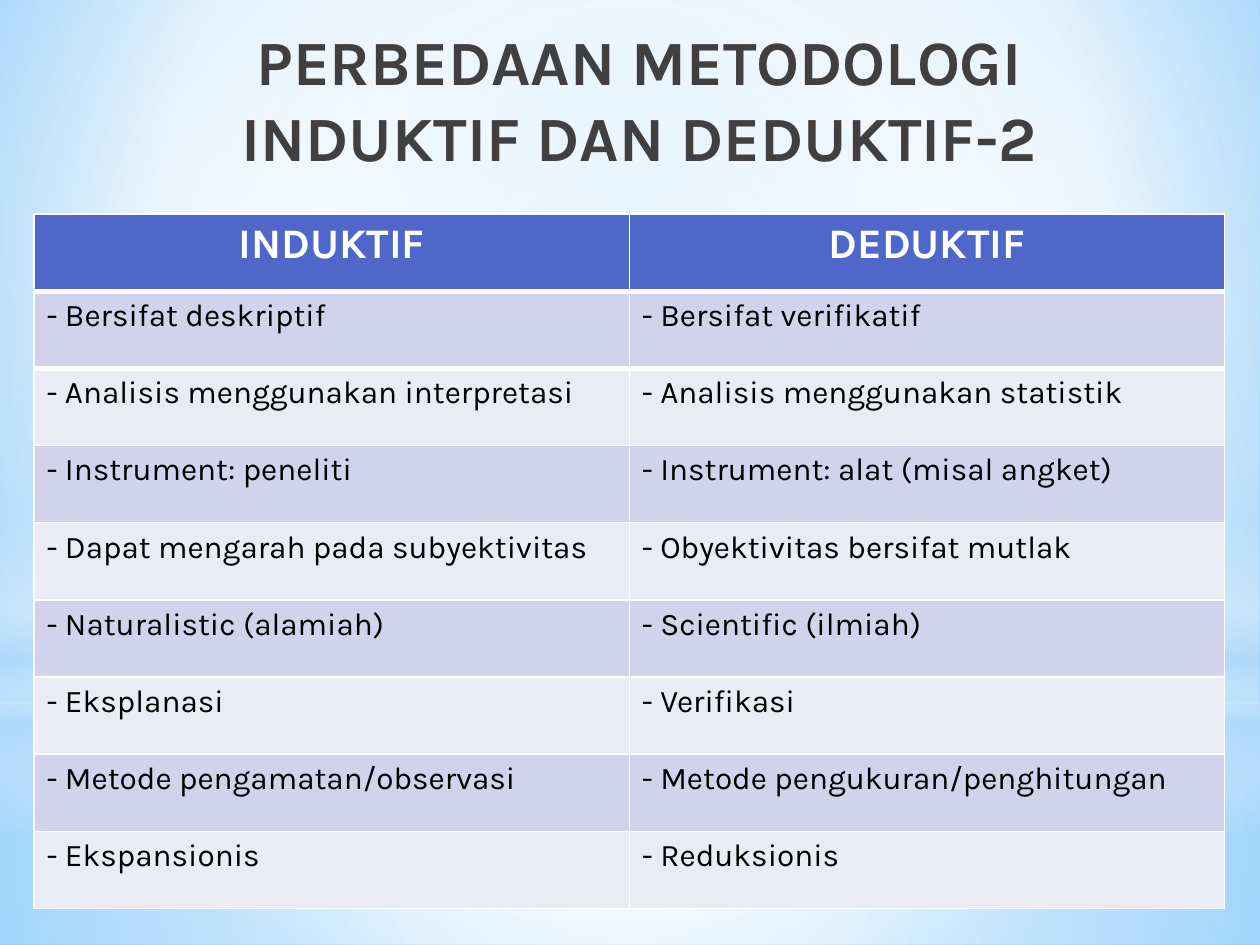
from lxml.etree import SubElement
from pptx import Presentation
from pptx.dml.color import RGBColor
from pptx.enum.shapes import MSO_SHAPE
from pptx.enum.text import MSO_ANCHOR, PP_ALIGN
from pptx.oxml.ns import qn
from pptx.util import Inches, Pt


def gradient(props, stops, centre=None, angle=90):
    """Swap the solid fill in props for a gradient of (position, colour, opacity)."""
    solid = props.find(qn("a:solidFill"))
    grad = props.makeelement(qn("a:gradFill"), {"rotWithShape": "1"})
    props.replace(solid, grad)
    stop_list = SubElement(grad, qn("a:gsLst"))
    for pos, colour, opacity in stops:
        stop = SubElement(stop_list, qn("a:gs"), pos=str(pos * 1000))
        clr = SubElement(stop, qn("a:srgbClr"), val=colour)
        SubElement(clr, qn("a:alpha"), val=str(opacity * 1000))
    if centre:
        circle = SubElement(grad, qn("a:path"), path="circle")
        SubElement(circle, qn("a:fillToRect"),
                   {side: str(v * 1000) for side, v in zip("ltrb", centre)})
    else:
        SubElement(grad, qn("a:lin"), ang=str(angle * 60000), scaled="0")


def write(p, text, size, colour, bold, align):
    """Add one run per line of text, with line breaks between them."""
    p.alignment = align
    for n, line in enumerate(text.split("\n")):
        if n:
            p.add_line_break()
        r = p.add_run()
        r.text = line
        r.font.name = "Karla"
        r.font.size = Pt(size)
        r.font.bold = bold
        r.font.color.rgb = RGBColor.from_string(colour)


prs = Presentation()
prs.slide_width, prs.slide_height = Inches(10), Inches(7.5)
s = prs.slides.add_slide(prs.slide_layouts[6])

# Background
s.background.fill.solid()
gradient(s.element.find(".//" + qn("p:bgPr")),
         [(0, "9ED5FF", 100), (60, "FFFFFF", 100), (100, "5BB9FF", 100)],
         centre=(20, 10, 20, 60))

# Soft light layers: preset, top, height, stops, centre
WHITE, SKY = "FFFFFF", "B4DCFA"
MIDDLE = (50, 50, 50, 50)
layers = [
    (MSO_SHAPE.RECTANGLE, 5.58, 1.92,
     [(0, WHITE, 91), (37, WHITE, 76), (100, SKY, 79)], MIDDLE),
    (MSO_SHAPE.RECTANGLE, 0, 5.58,
     [(0, WHITE, 89), (48, WHITE, 62), (100, SKY, 79)], MIDDLE),
    (MSO_SHAPE.RECTANGLE, 4.12, 2.5,
     [(0, WHITE, 0), (29, WHITE, 30), (45, SKY, 40),
      (55, WHITE, 26), (65, SKY, 60), (100, WHITE, 0)], None),
    (MSO_SHAPE.OVAL, 1.75, 5.58, [(0, WHITE, 100), (56, WHITE, 0)], MIDDLE),
]
for preset, top, height, stops, centre in layers:
    sp = s.shapes.add_shape(preset, 0, Inches(top), prs.slide_width, Inches(height))
    sp.shadow.inherit = False
    sp.line.fill.background()
    sp.fill.solid()
    gradient(sp.element.spPr, stops, centre)

# Title
sp = s.shapes.add_textbox(Inches(0.51), Inches(0.13), Inches(9.13), Inches(1.1))
tf = sp.text_frame
tf.word_wrap = True
tf.vertical_anchor = MSO_ANCHOR.TOP
write(tf.paragraphs[0], "PERBEDAAN METODOLOGI\nINDUKTIF DAN DEDUKTIF-2",
      36, "404040", True, PP_ALIGN.CENTER)

# Comparison table; its default style draws the thin white rules
rows = [
    ("INDUKTIF", "DEDUKTIF"),
    ("- Bersifat deskriptif", "- Bersifat verifikatif"),
    ("- Analisis menggunakan interpretasi", "- Analisis menggunakan statistik"),
    ("- Instrument: peneliti", "- Instrument: alat (misal angket)"),
    ("- Dapat mengarah pada subyektivitas", "- Obyektivitas bersifat mutlak"),
    ("- Naturalistic (alamiah)", "- Scientific (ilmiah)"),
    ("- Eksplanasi", "- Verifikasi"),
    ("- Metode pengamatan/observasi", "- Metode pengukuran/penghitungan"),
    ("- Ekspansionis", "- Reduksionis"),
]
table = s.shapes.add_table(len(rows), 2, Inches(0.27), Inches(1.7),
                           Inches(9.45), Inches(5.51)).table
for i, row in enumerate(rows):
    for j, text in enumerate(row):
        cell = table.cell(i, j)
        cell.fill.solid()
        p = cell.text_frame.paragraphs[0]
        if i == 0:
            fill = "4E67C8"
            write(p, text, 24, WHITE, True, PP_ALIGN.CENTER)
        else:
            fill = "D0D3EB" if i % 2 else "E9EBF5"
            write(p, text, 18, "000000", False, PP_ALIGN.LEFT)
        cell.fill.fore_color.rgb = RGBColor.from_string(fill)

        # Thick rule between the header and the first body row
        if i < 2:
            tcPr = cell._tc.get_or_add_tcPr()
            side = "a:lnT" if i else "a:lnB"
            rule = tcPr.makeelement(qn(side), {"w": str(Pt(3))})
            tcPr.insert(0, rule)
            SubElement(SubElement(rule, qn("a:solidFill")), qn("a:srgbClr"), val=WHITE)

prs.save("out.pptx")
